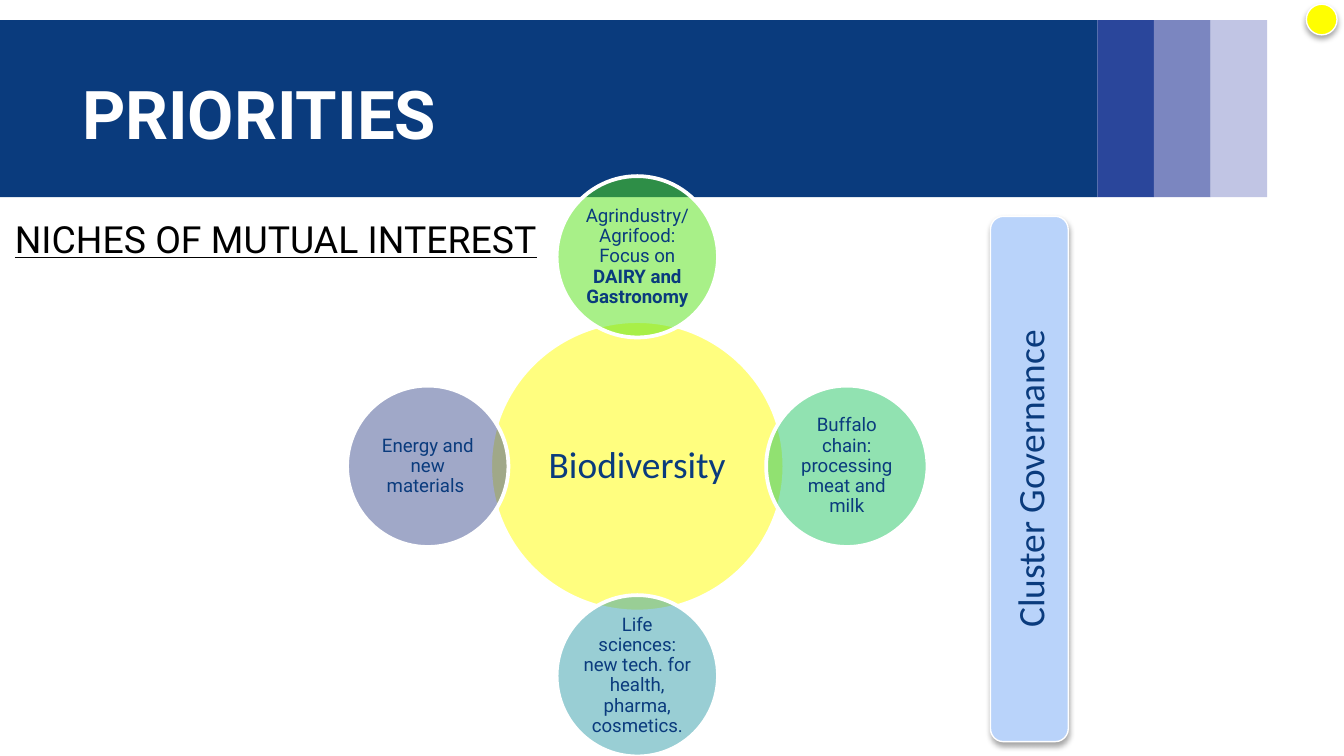
import lxml.etree
import pptx
import pptx.dml.color
import pptx.enum.shapes
import pptx.enum.text
import pptx.oxml.ns
import pptx.util

Cm = pptx.util.Cm
Pt = pptx.util.Pt
SHAPES = pptx.enum.shapes.MSO_SHAPE
ALIGN = pptx.enum.text.PP_ALIGN
ANCHOR = pptx.enum.text.MSO_ANCHOR
NAVY, WHITE, YELLOW = "0A3B7D", "FFFFFF", "FFFE01"


def colour(hex_value):
    return pptx.dml.color.RGBColor.from_string(hex_value)


def add_element(parent, tag, **attributes):
    return lxml.etree.SubElement(parent, pptx.oxml.ns.qn(tag), attributes)


def apply_format(target, values):
    for name, value in values.items():
        setattr(target, name, value)


def place(part, box):
    names = ("left", "top", "width", "height")
    apply_format(part, dict(zip(names, map(Cm, box))))


def format_frame(frame, anchor, inset=None):
    values = {
        "word_wrap": True,
        "auto_size": pptx.enum.text.MSO_AUTO_SIZE.NONE,
        "vertical_anchor": anchor,
    }
    if inset is not None:
        sides = ("left", "top", "right", "bottom")
        values.update({f"margin_{side}": Cm(inset) for side in sides})
    apply_format(frame, values)


def write_text(paragraph, runs, size, face, hex_value, layout, **font_values):
    apply_format(paragraph, layout)
    for words, bold in runs:
        run = paragraph.add_run()
        run.text = words
        apply_format(run.font, {
            "size": Pt(size), "name": face, "bold": bold, **font_values})
        run.font.color.rgb = colour(hex_value)


def draw(slide, preset, box, fill, border=None, alpha=None, shadow=False):
    shape = slide.shapes.add_shape(preset, *map(Cm, box))
    shape.fill.solid()
    shape.fill.fore_color.rgb = colour(fill)
    if alpha:
        tint = shape.fill._xPr.find(".//" + pptx.oxml.ns.qn("a:srgbClr"))
        add_element(tint, "a:alpha", val=str(alpha * 1000))
    if border:
        shape.line.color.rgb = colour(WHITE)
        shape.line.width = Pt(border)
    else:
        shape.line.fill.background()
    shape.shadow.inherit = False
    if shadow:
        effects = shape._element.spPr.find(pptx.oxml.ns.qn("a:effectLst"))
        outer = add_element(
            effects, "a:outerShdw", blurRad=str(Pt(3.1)), dist=str(Pt(1.8)),
            dir="5400000", algn="ctr", rotWithShape="0")
        black = add_element(outer, "a:srgbClr", val="000000")
        add_element(black, "a:alpha", val="35000")
    return shape


def add_banner(slide, box):
    left, top, width, height = box
    stripe_width = 1.07
    stripes = ("2A469B", "7B86C0", "C1C5E4")
    band_width = width - stripe_width * len(stripes)
    bands = [draw(slide, SHAPES.RECTANGLE, (left, top, band_width, height), NAVY)]
    for index, fill in enumerate(stripes):
        stripe_left = left + band_width + index * stripe_width
        bands.append(draw(
            slide, SHAPES.RECTANGLE,
            (stripe_left, top, stripe_width, height), fill))
    for position, band in enumerate(bands):
        slide.shapes._spTree.insert(2 + position, band._element)


def add_title(slide, box):
    title = slide.shapes.title
    place(title, box)
    format_frame(title.text_frame, ANCHOR.MIDDLE)
    write_text(title.text_frame.paragraphs[0], [("PRIORITIES", True)],
               36, "Roboto", WHITE, {"alignment": ALIGN.LEFT})


def add_niches(slide, box):
    niches = slide.placeholders[1]
    place(niches, box)
    format_frame(niches.text_frame, ANCHOR.TOP, 0)
    heading = niches.text_frame.paragraphs[0]
    properties = heading._p.get_or_add_pPr()
    apply_format(heading, {"space_before": Pt(0), "space_after": Pt(6)})
    properties.set("marL", "0")
    properties.set("indent", "0")
    add_element(properties, "a:buNone")
    write_text(heading, [("NICHES OF MUTUAL INTEREST", False)],
               20, "Roboto", "000000", {}, underline=True)


def add_circle(slide, box, fill, runs, size, face, inset):
    circle = draw(slide, SHAPES.OVAL, box, fill, border=2, alpha=50)
    format_frame(circle.text_frame, ANCHOR.MIDDLE, inset)
    write_text(circle.text_frame.paragraphs[0], runs, size, face, NAVY,
               {"alignment": ALIGN.CENTER, "line_spacing": 0.9})


def add_biodiversity_wheel(slide, box):
    left, top, width, height = box
    center_x, center_y = left + width / 2, top + height / 2
    hub_width, hub_height, niche_size = 5.56, 5.49, 3.05
    orbit = (width - niche_size) / 2
    add_circle(
        slide,
        (center_x - hub_width / 2, center_y - hub_height / 2,
         hub_width, hub_height),
        YELLOW, [("Biodiversity", False)], 20, "Calibri", 0.08)
    niches = [
        (0, -1, "52E213", [("Agrindustry/Agrifood: Focus on ", False),
                           ("DAIRY and Gastronomy", True)]),
        (1, 0, "25C665", [("Buffalo chain: processing meat and milk", False)]),
        (0, 1, "359FAB", [("Life sciences: new tech. for health, pharma, "
                           "cosmetics.", False)]),
        (-1, 0, "435392", [("Energy and new materials ", False)]),
    ]
    for step_x, step_y, fill, runs in niches:
        niche_box = (center_x + step_x * orbit - niche_size / 2,
                     center_y + step_y * orbit - niche_size / 2,
                     niche_size, niche_size)
        add_circle(slide, niche_box, fill, runs, 10, "Roboto", 0.03)


def add_governance(slide, box):
    governance = draw(slide, SHAPES.ROUNDED_RECTANGLE, box, "B9D3FA",
                      border=0.75, shadow=True)
    format_frame(governance.text_frame, ANCHOR.MIDDLE)
    governance.text_frame._txBody.bodyPr.set("vert", "vert270")
    write_text(governance.text_frame.paragraphs[0],
               [("Cluster Governance", False)], 20, "Calibri", NAVY,
               {"alignment": ALIGN.CENTER})


def add_marker(slide, box):
    draw(slide, SHAPES.OVAL, box, YELLOW, border=0.75, shadow=True)


def main():
    presentation = pptx.Presentation()
    apply_format(presentation, {
        "slide_width": Cm(25.4), "slide_height": Cm(14.29)})
    priorities = presentation.slides.add_slide(presentation.slide_layouts[1])
    add_banner(priorities, (-0.05, 0.38, 24, 3.35))
    add_title(priorities, (1.3, 0.94, 18.31, 2.39))
    add_niches(priorities, (0.28, 4.09, 23.75, 9.93))
    add_biodiversity_wheel(priorities, (6.56, 3.33, 10.97, 10.97))
    add_governance(priorities, (18.72, 4.09, 1.47, 9.93))
    add_marker(priorities, (24.69, 0.08, 0.58, 0.58))
    presentation.save("out.pptx")


if __name__ == "__main__":
    main()
